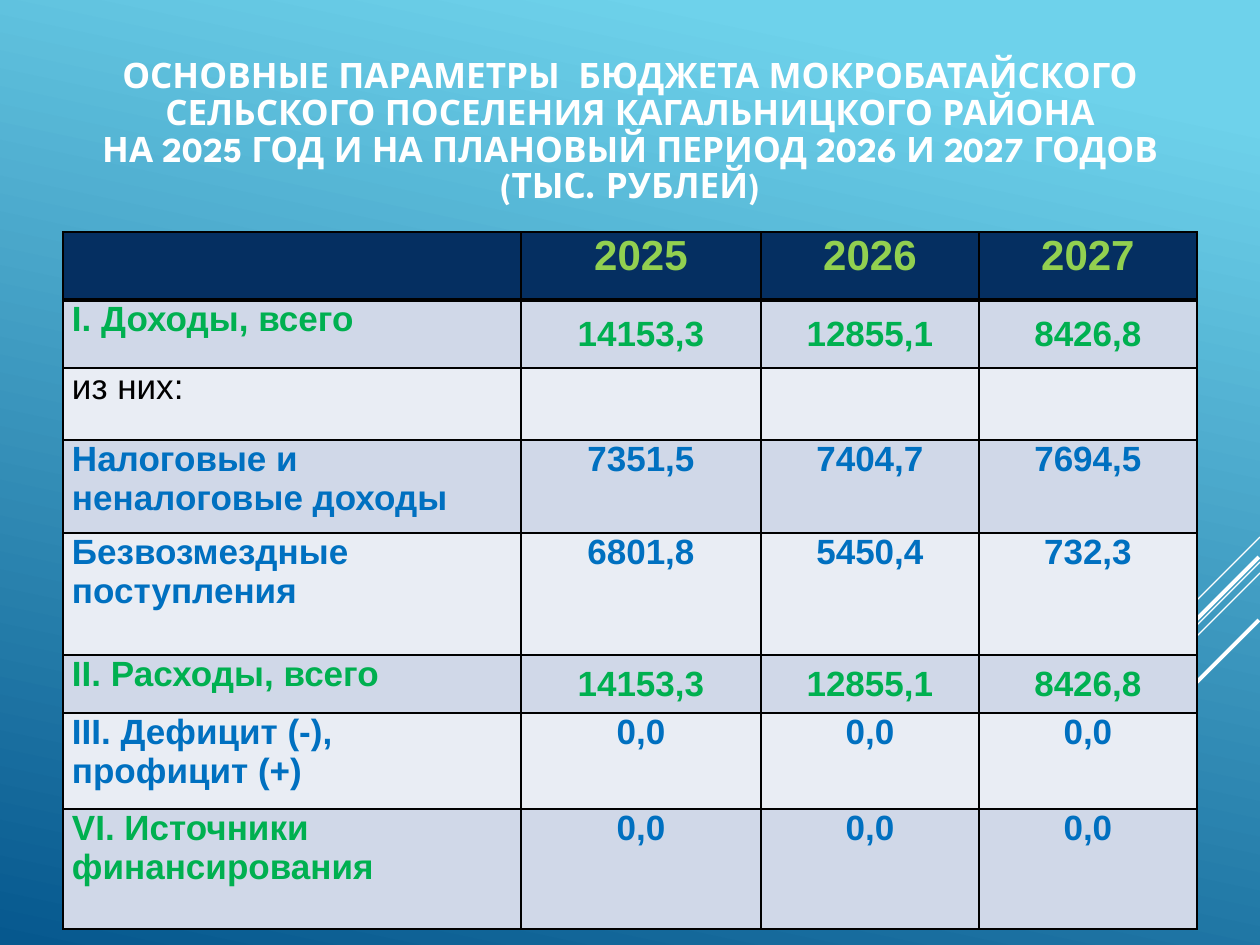
from dataclasses import dataclass

from lxml import etree
from pptx import Presentation
from pptx import util as u
from pptx.dml.color import RGBColor
from pptx.enum import shapes, text
from pptx.oxml import ns


@dataclass(frozen=True)
class Theme:
    sky: str = "6ED2EB"
    deep: str = "06588E"
    white: str = "FFFFFF"
    black: str = "000000"
    header: str = "052F61"
    bands: tuple[str, str] = ("D0D8E8", "E9EDF4")
    lime: str = "92D050"
    green: str = "00B050"
    blue: str = "0070C0"
    title_face: str = "League Spartan"
    table_face: str = "Arial"
    body_size: int = 20
    year_size: int = 24


@dataclass(frozen=True)
class Ray:
    x: int
    y: int
    length: int
    weight: float


@dataclass(frozen=True)
class BudgetRow:
    label: str
    values: tuple[str, ...]
    height: int
    label_color: str
    value_color: str
    bold: bool = True
    centered: bool = False


THEME = Theme()
EMU_PER_PX = 914400 / 126
TITLE = (
    "ОСНОВНЫЕ ПАРАМЕТРЫ  БЮДЖЕТА МОКРОБАТАЙСКОГО "
    "СЕЛЬСКОГО ПОСЕЛЕНИЯ КАГАЛЬНИЦКОГО РАЙОНА\v"
    "НА 2025 ГОД И НА ПЛАНОВЫЙ ПЕРИОД 2026 И 2027 ГОДОВ\v"
    "(ТЫС. РУБЛЕЙ)"
)
RAYS = [
    Ray(1260, 537, 105, 0.75),
    Ray(1260, 562, 341, 0.75),
    Ray(1260, 573, 217, 0.75),
    Ray(1259, 557, 198, 2.25),
    Ray(1259, 620, 144, 2.25),
]
TOTALS = ("14153,3", "12855,1", "8426,8")
ZEROS = ("0,0",) * 3
COLUMN_WIDTHS = (458, 240, 218, 218)
BUDGET = [
    BudgetRow("", ("2025", "2026", "2027"), 68, THEME.lime, THEME.lime),
    BudgetRow("I. Доходы, всего", TOTALS, 68, THEME.green, THEME.green, centered=True),
    BudgetRow("из них:", ("",) * 3, 72, THEME.black, THEME.black, bold=False),
    BudgetRow("Налоговые и неналоговые доходы", ("7351,5", "7404,7", "7694,5"),
              93, THEME.blue, THEME.blue),
    BudgetRow("Безвозмездные поступления", ("6801,8", "5450,4", "732,3"),
              122, THEME.blue, THEME.blue),
    BudgetRow("II. Расходы, всего", TOTALS, 58, THEME.green, THEME.green, centered=True),
    BudgetRow("III. Дефицит (-), профицит (+)", ZEROS, 96, THEME.blue, THEME.blue),
    BudgetRow("VI. Источники финансирования", ZEROS, 120, THEME.green, THEME.blue),
]


def px(length: int) -> u.Emu:
    return u.Emu(round(length * EMU_PER_PX))


def rgb(color: str) -> RGBColor:
    return RGBColor.from_string(color)


def style(paragraph, face: str, size: int, color: str, bold: bool) -> None:
    font = paragraph.font
    font.name, font.size, font.bold = face, u.Pt(size), bold
    font.color.rgb = rgb(color)


def set_margins(box, left: int, top: int, right: int, bottom: int) -> None:
    box.margin_left, box.margin_top = px(left), px(top)
    box.margin_right, box.margin_bottom = px(right), px(bottom)


def paint_background(slide) -> None:
    fill = slide.background.fill
    fill.gradient()
    fill.gradient_angle = 360 - 102
    for stop, position, color in zip(fill.gradient_stops, (0.1, 1), (THEME.sky, THEME.deep)):
        stop.position = position
        stop.color.rgb = rgb(color)


def draw_ray(slide, ray: Ray) -> None:
    line = slide.shapes.add_connector(
        shapes.MSO_CONNECTOR.STRAIGHT, px(ray.x), px(ray.y),
        px(ray.x - ray.length), px(ray.y + ray.length))
    line.line.color.rgb = rgb(THEME.white)
    line.line.width = u.Pt(ray.weight)
    etree.SubElement(line._element.spPr, ns.qn("a:effectLst"))


def draw_title(slide) -> None:
    frame = slide.shapes.add_textbox(px(63), px(40), px(1134), px(227)).text_frame
    frame.word_wrap = True
    frame.vertical_anchor = text.MSO_ANCHOR.MIDDLE
    set_margins(frame, 13, 6, 13, 48)
    heading = frame.paragraphs[0]
    heading.text = TITLE
    heading.alignment = text.PP_ALIGN.CENTER
    heading.line_spacing = 0.88
    style(heading, THEME.title_face, THEME.body_size, THEME.white, True)


def draw_borders(cell, top: int, bottom: int) -> None:
    properties = cell._tc.get_or_add_tcPr()
    for side, weight in (("L", 1), ("R", 1), ("T", top), ("B", bottom)):
        edge = etree.SubElement(properties, ns.qn(f"a:ln{side}"), w=str(u.Pt(weight)))
        fill = etree.SubElement(edge, ns.qn("a:solidFill"))
        etree.SubElement(fill, ns.qn("a:srgbClr"), val=THEME.black)


def fill_cell(cell, row_index: int, column: int, row: BudgetRow) -> None:
    is_header, is_label = row_index == 0, column == 0
    draw_borders(cell, 3 if row_index == 1 else 1, 3 if is_header else 1)
    cell.fill.solid()
    cell.fill.fore_color.rgb = rgb(THEME.header if is_header else THEME.bands[(row_index - 1) % 2])
    if row.centered and not is_label:
        cell.vertical_anchor = text.MSO_ANCHOR.MIDDLE
        set_margins(cell, 1, 1, 1, 0)
    else:
        cell.vertical_anchor = text.MSO_ANCHOR.TOP
        set_margins(cell, 9, 0, 9, 0)
    entry = cell.text_frame.paragraphs[0]
    entry.text = row.label if is_label else row.values[column - 1]
    entry.alignment = text.PP_ALIGN.LEFT if is_label else text.PP_ALIGN.CENTER
    style(entry, THEME.table_face, THEME.year_size if is_header else THEME.body_size,
          row.label_color if is_label else row.value_color, row.bold)


def draw_budget(slide) -> None:
    table = slide.shapes.add_table(
        len(BUDGET), len(COLUMN_WIDTHS), px(63), px(232),
        px(sum(COLUMN_WIDTHS)), px(sum(row.height for row in BUDGET))).table
    for column, width in zip(table.columns, COLUMN_WIDTHS):
        column.width = px(width)
    for row_index, row in enumerate(BUDGET):
        table.rows[row_index].height = px(row.height)
        for column in range(len(COLUMN_WIDTHS)):
            fill_cell(table.cell(row_index, column), row_index, column, row)


def main() -> None:
    deck = Presentation()
    deck.slide_width, deck.slide_height = px(1260), px(945)
    slide = deck.slides.add_slide(deck.slide_layouts[6])
    paint_background(slide)
    for ray in RAYS:
        draw_ray(slide, ray)
    draw_title(slide)
    draw_budget(slide)
    deck.save("out.pptx")


if __name__ == "__main__":
    main()
